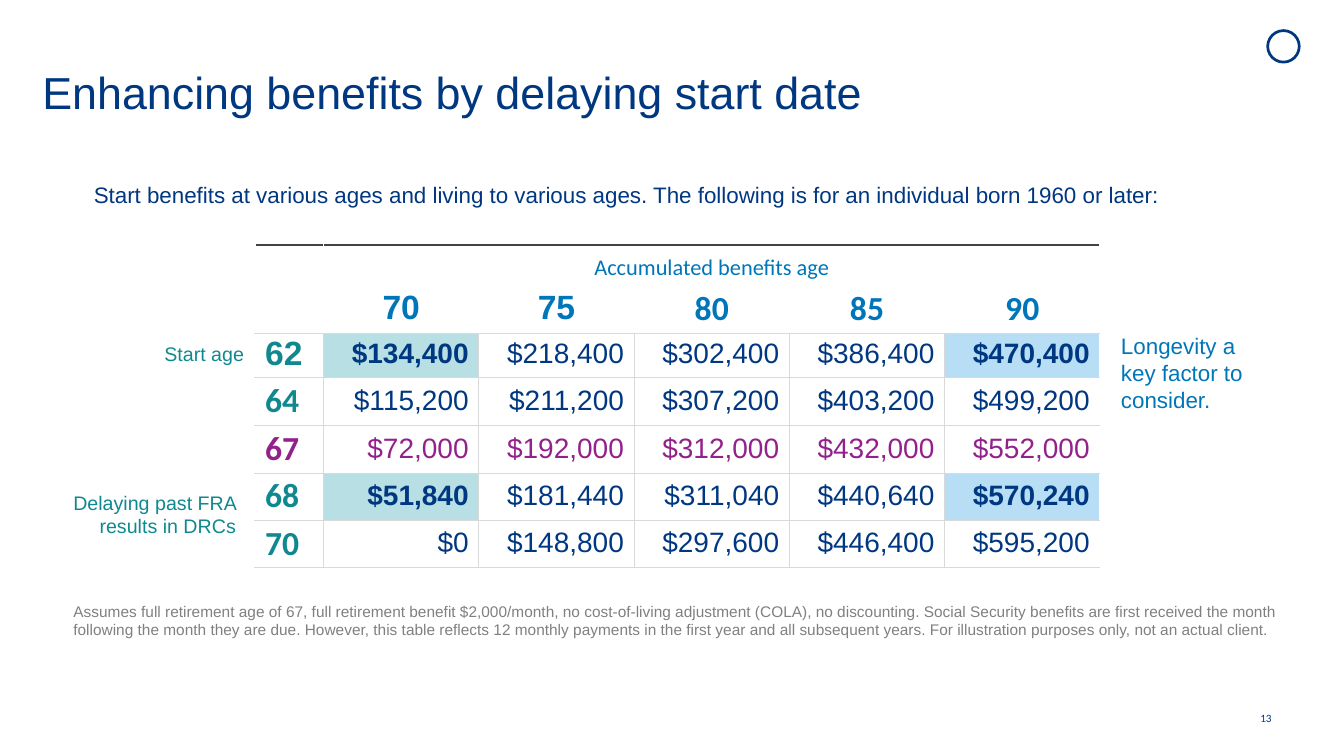
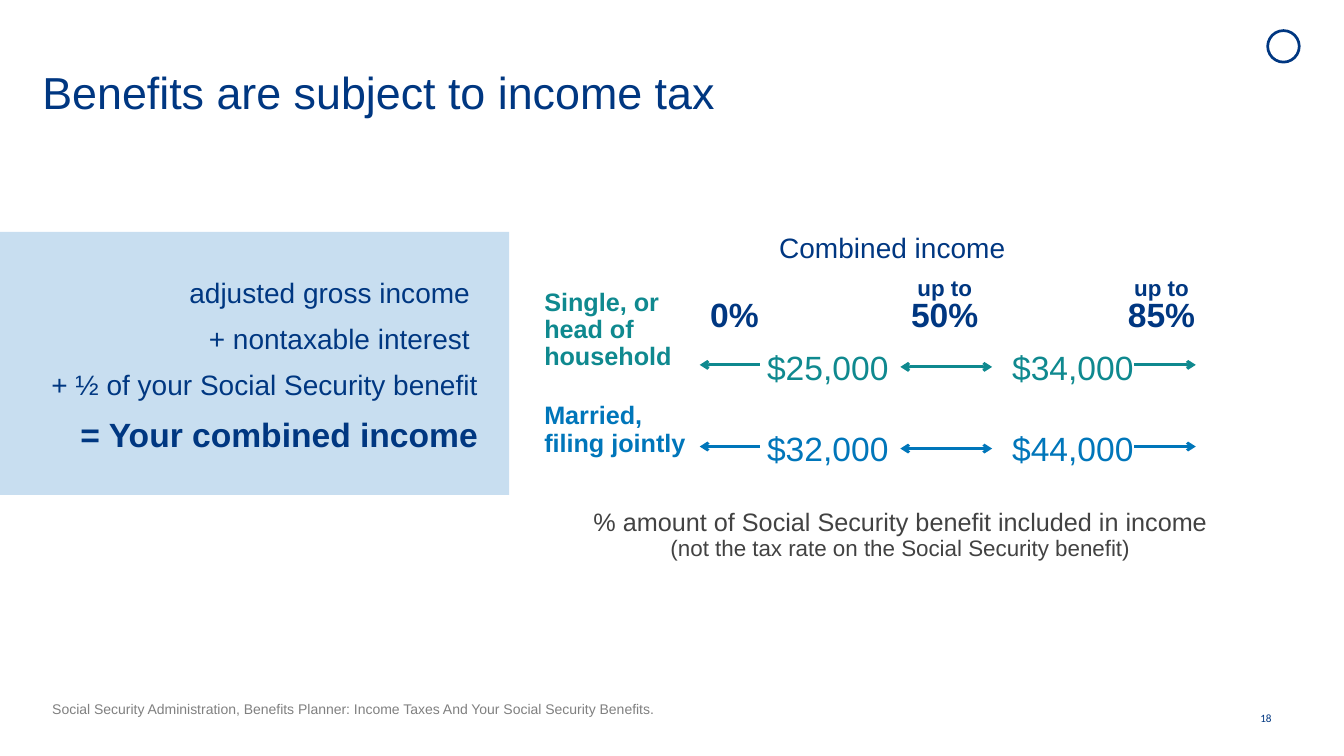
from lxml import etree
from pptx import Presentation
from pptx import util as u
from pptx.dml.color import RGBColor
from pptx.enum import shapes, text
from pptx.oxml.ns import qn

PX = 9144
NAVY, BLUE, TEAL, PLUM = "003781", "0076BA", "0F898F", "93218B"
GREY, DARK, RULE = "808080", "424242", "D9D9D9"
MINT, SKY, PALE = "B7DFE4", "B7DEF4", "C8DEF0"
ALIGN = {"l": text.PP_ALIGN.LEFT, "c": text.PP_ALIGN.CENTER, "r": text.PP_ALIGN.RIGHT}
ANCHOR = {"t": text.MSO_ANCHOR.TOP, "m": text.MSO_ANCHOR.MIDDLE, "b": text.MSO_ANCHOR.BOTTOM}

AGES = ["70", "75", "80", "85", "90"]
STARTS = {
    "62": ["$134,400", "$218,400", "$302,400", "$386,400", "$470,400"],
    "64": ["$115,200", "$211,200", "$307,200", "$403,200", "$499,200"],
    "67": ["$72,000", "$192,000", "$312,000", "$432,000", "$552,000"],
    "68": ["$51,840", "$181,440", "$311,040", "$440,640", "$570,240"],
    "70": ["$0", "$148,800", "$297,600", "$446,400", "$595,200"],
}
COLS = [68] + [154] * 5
ROWS = [39, 47, 44, 48, 47, 47, 47]
NOTE = (
    "Assumes full retirement age of 67, full retirement benefit $2,000/month, "
    "no cost-of-living adjustment (COLA), no discounting. Social Security benefits "
    "are first received the month following the month they are due. However, this "
    "table reflects 12 monthly payments in the first year and all subsequent years. "
    "For illustration purposes only, not an actual client."
)


def px(n):
    """Turn px into EMU."""
    return u.Emu(n * PX)


def rgb(code):
    """Turn a hex string into a colour."""
    return RGBColor.from_string(code)


def paint(item, code):
    """Give an item a solid fill, or none."""
    if code:
        item.fill.solid()
        item.fill.fore_color.rgb = rgb(code)
    else:
        item.fill.background()


def place(shape, left, top, width, height):
    """Move and size a shape."""
    shape.left, shape.top = px(left), px(top)
    shape.width, shape.height = px(width), px(height)


def write(frame, line, size=16, color=NAVY, bold=False, font="Arial", align="l",
          space=None, before=0, after=0, plain=False):
    """Add one formatted paragraph to a text frame."""
    para = frame.add_paragraph() if frame.text else frame.paragraphs[0]
    para.alignment = ALIGN[align]
    para.line_spacing = space
    para.space_before, para.space_after = u.Pt(before), u.Pt(after)
    if plain:
        props = para._p.get_or_add_pPr()
        props.set("marL", "0")
        props.set("indent", "0")
        etree.SubElement(props, qn("a:buNone"))
    run = para.add_run()
    run.text = line
    face = run.font
    face.name, face.size, face.bold = font, u.Pt(size), bold
    face.color.rgb = rgb(color)


def setup(frame, anchor="t", inset=(10, 5, 10, 5)):
    """Set wrapping, anchor and insets of a text frame."""
    frame.word_wrap = True
    frame.auto_size = text.MSO_AUTO_SIZE.NONE
    frame.vertical_anchor = ANCHOR[anchor]
    frame.margin_left, frame.margin_top, frame.margin_right, frame.margin_bottom = map(px, inset)
    return frame


def label(slide, box, line, anchor="t", inset=(10, 5, 10, 5), **style):
    """Add a text box and return its frame."""
    frame = setup(slide.shapes.add_textbox(*map(px, box)).text_frame, anchor, inset)
    write(frame, line, **style)
    return frame


def base(deck, title, number):
    """Add a slide with title, badge and page number."""
    slide = deck.slides.add_slide(deck.slide_layouts[1])
    head = slide.shapes.title
    place(head, 42, 29, 1198, 89)
    write(setup(head.text_frame, "b", (0, 0, 0, 0)), title, size=32, space=0.9)
    badge = slide.shapes.add_shape(shapes.MSO_SHAPE.DONUT, px(1256), px(29), px(34), px(34))
    badge.adjustments[0] = 0.08
    badge.shadow.inherit = False
    paint(badge, NAVY)
    badge.line.fill.background()
    label(slide, (1250, 692, 40, 40), number, "m", (0, 6, 0, 6), size=8, font="Calibri")
    return slide


def body(slide, box, inset=(10, 5, 10, 5)):
    """Place the body placeholder and return it."""
    shape = slide.placeholders[1]
    place(shape, *box)
    setup(shape.text_frame, inset=inset)
    return shape


def edge(cell, sides, color):
    """Draw the named borders of a cell, in the order L R T B."""
    props = cell._tc.get_or_add_tcPr()
    for side in sides:
        line = etree.SubElement(props, qn("a:ln" + side), w=str(u.Pt(1)))
        fill = etree.SubElement(line, qn("a:solidFill"))
        etree.SubElement(fill, qn("a:srgbClr"), val=color)


def fill_in(cell, line, anchor="m", fill=None, **style):
    """Fill a table cell with formatted text."""
    paint(cell, fill)
    cell.vertical_anchor = ANCHOR[anchor]
    cell.margin_left = cell.margin_right = px(10)
    cell.margin_top = cell.margin_bottom = px(5)
    if line:
        write(cell.text_frame, line, space=0.9, **style)


def grid(slide):
    """Add the table of accumulated benefits."""
    table = slide.shapes.add_table(
        len(ROWS), len(COLS), px(253), px(243), px(sum(COLS)), px(sum(ROWS))).table
    table.first_row = table.horz_banding = False
    for col, width in zip(table.columns, COLS):
        col.width = px(width)
    for row, height in zip(table.rows, ROWS):
        row.height = px(height)
    last = len(COLS) - 1
    for c in range(len(COLS)):
        edge(table.cell(0, c), "T", DARK)
        edge(table.cell(1, c), "B", RULE)
        for r in range(2, len(ROWS)):
            edge(table.cell(r, c), ("L" if c else "") + ("R" if c < last else "") + "TB", RULE)
    table.cell(0, 1).merge(table.cell(0, last))
    fill_in(table.cell(0, 0), "")
    fill_in(table.cell(0, 1), "Accumulated benefits age", "b",
            color=BLUE, font="Calibri", align="c")
    fill_in(table.cell(1, 0), "")
    for c, age in enumerate(AGES, 1):
        fill_in(table.cell(1, c), age, size=24, color=BLUE, bold=True, align="c",
                font="Arial" if c < 3 else "Calibri")
    for r, (start, sums) in enumerate(STARTS.items(), 2):
        full = start == "67"
        fill_in(table.cell(r, 0), start, size=24, color=PLUM if full else TEAL, bold=True,
                font="Arial" if start == "62" else "Calibri")
        marks = {1: MINT, last: SKY} if start in ("62", "68") else {}
        for c, value in enumerate(sums, 1):
            fill_in(table.cell(r, c), value, fill=marks.get(c), size=20, align="r",
                    color=PLUM if full else NAVY, bold=c in marks)


def arrow(slide, start, end, y, color, ends):
    """Draw a level line with arrowheads at the given ends."""
    line = slide.shapes.add_connector(
        shapes.MSO_CONNECTOR.STRAIGHT, px(start), px(y), px(end), px(y))
    line.line.color.rgb = rgb(color)
    line.line.width = u.Pt(2)
    for name in ends:
        etree.SubElement(line.line._ln, qn("a:" + name), type="arrow")
    etree.SubElement(line._element.spPr, qn("a:effectLst"))


def lane(slide, top, color, low, high):
    """Draw the two thresholds of one filing status with their arrows."""
    for left, value in ((751, low), (994, high)):
        label(slide, (left, top, 150, 50), value, size=24, color=color)
    arrow(slide, 694, 754, top + 23, color, ["headEnd"])
    arrow(slide, 893, 984, top + 25, color, ["headEnd", "tailEnd"])
    arrow(slide, 1125, 1186, top + 23, color, ["tailEnd"])


def delay(deck):
    """Build the slide on delaying the start date."""
    slide = base(deck, "Enhancing benefits by delaying start date", "13")
    intro = body(slide, (83, 175, 1250, 50))
    write(intro.text_frame, "Start benefits at various ages and living to various ages. "
          "The following is for an individual born 1960 or later:", plain=True)
    grid(slide)
    label(slide, (146, 337, 106, 50), "Start age", size=14, color=TEAL, align="r", space=0.9)
    label(slide, (47, 482, 197, 57), "Delaying past FRA results in DRCs",
          size=14, color=TEAL, align="r")
    label(slide, (63, 592, 1230, 47), NOTE, size=11, color=GREY)
    label(slide, (1102, 325, 150, 91), "Longevity a key factor to consider.", color=BLUE)


def tax(deck):
    """Build the slide on income tax."""
    slide = base(deck, "Benefits are subject to income tax", "18")
    panel = body(slide, (0, 230, 505, 261), (10, 43, 31, 5))
    paint(panel, PALE)
    for part in ("adjusted gross income ", "+ nontaxable interest ",
                 "+ ½ of your Social Security benefit"):
        write(panel.text_frame, part, size=20, align="r", before=3, after=6, plain=True)
    write(panel.text_frame, "= Your combined income", size=24, bold=True, align="r",
          before=3, plain=True)

    label(slide, (763, 228, 296, 40), "Combined income", size=20, space=0.9)
    label(slide, (668, 287, 121, 51), "0%", size=24, bold=True, align="c")
    for left, width, share in ((877, 120, "50%"), (1061, 182, "85%")):
        style = dict(bold=True, align="c", space=u.Pt(24))
        frame = label(slide, (left, 260, width, 77), "up to", **style)
        write(frame, share, size=24, **style)

    status = dict(size=18, bold=True, space=0.9)
    label(slide, (530, 282, 170, 92), "Single, or head of household", color=TEAL, **status)
    pair = label(slide, (530, 395, 196, 65), "Married,", color=BLUE, **status)
    write(pair, "filing jointly", color=BLUE, **status)
    lane(slide, 339, TEAL, "$25,000", "$34,000")
    lane(slide, 420, BLUE, "$32,000", "$44,000")

    style = dict(color=DARK, align="c", space=u.Pt(17))
    frame = label(slide, (570, 504, 646, 58),
                  "% amount of Social Security benefit included in income", size=18, **style)
    write(frame, "(not the tax rate on the Social Security benefit)", **style)
    label(slide, (42, 690, 693, 27), "Social Security Administration, Benefits Planner: "
          "Income Taxes And Your Social Security Benefits.", size=10, color=GREY)


def main():
    """Build and save the deck."""
    deck = Presentation()
    deck.slide_width, deck.slide_height = px(1333), px(750)
    delay(deck)
    tax(deck)
    deck.save("out.pptx")


if __name__ == "__main__":
    main()
